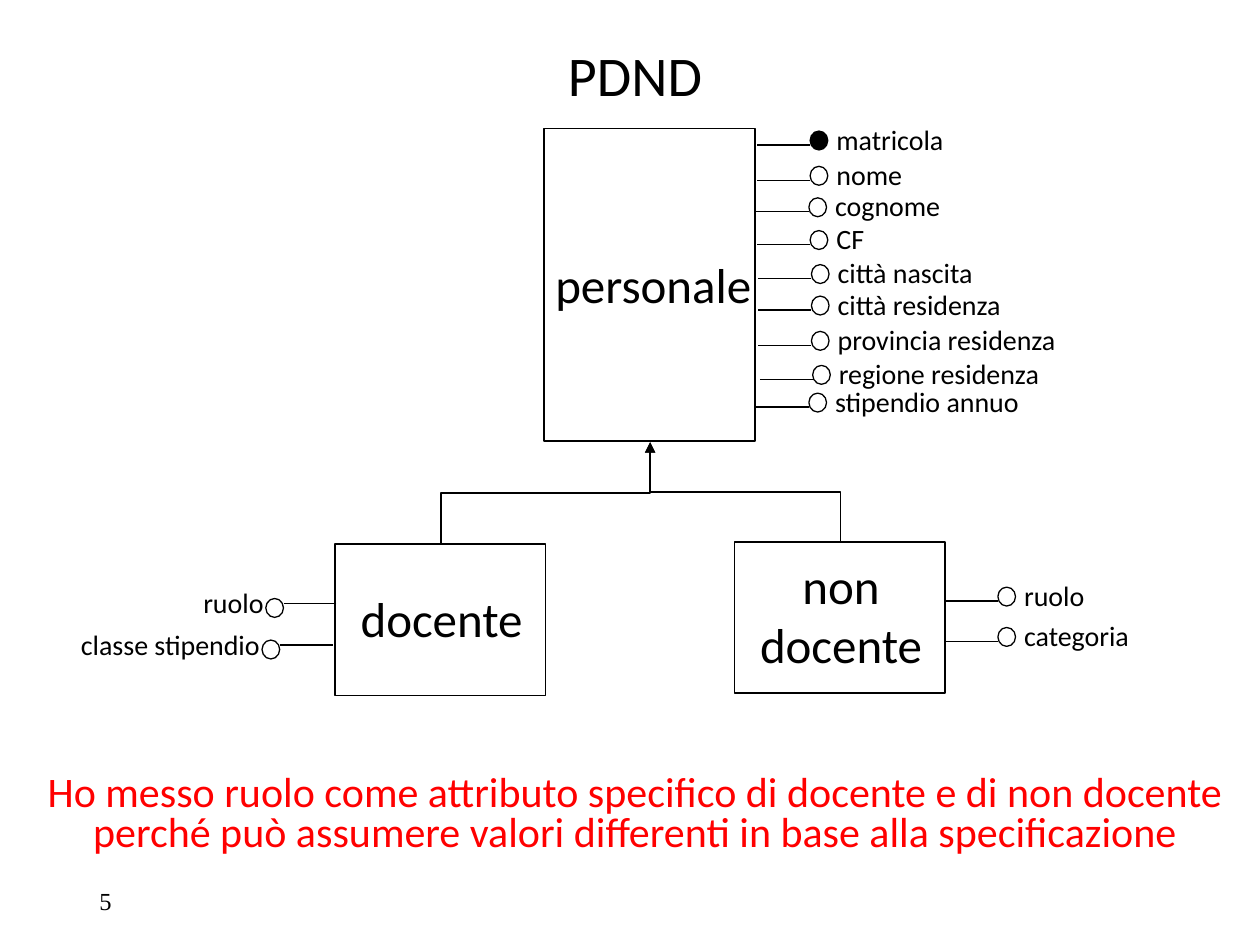
from lxml.etree import SubElement
from pptx import Presentation
from pptx.dml.color import RGBColor
from pptx.enum.shapes import MSO_CONNECTOR, MSO_SHAPE
from pptx.enum.text import MSO_ANCHOR, PP_ALIGN
from pptx.oxml.ns import qn
from pptx.util import Inches, Pt

BLACK, WHITE, RED = "000000", "FFFFFF", "FF0000"

deck = Presentation()
deck.slide_width, deck.slide_height = Inches(10), Inches(7.5)
slide = deck.slides.add_slide(deck.slide_layouts[5])
shapes = slide.shapes


def write(box, text, size, align=PP_ALIGN.LEFT, anchor=MSO_ANCHOR.TOP,
          color=BLACK, font="Calibri", spacing=None):
    frame = box.text_frame
    frame.word_wrap = True
    frame.vertical_anchor = anchor
    frame.text = text
    paragraph = frame.paragraphs[0]
    paragraph.alignment = align
    paragraph.line_spacing = spacing
    paragraph.font.size = Pt(size)
    paragraph.font.name = font
    paragraph.font.color.rgb = RGBColor.from_string(color)


def outline(shape, width):
    shape.line.color.rgb = RGBColor.from_string(BLACK)
    shape.line.width = Pt(width)
    SubElement(shape._element.spPr, qn("a:effectLst"))


title = shapes.title
title.left, title.top, title.width, title.height = map(Inches, (0.27, 0.22, 9.54, 0.8))
write(title, "PDND", 32, PP_ALIGN.CENTER, MSO_ANCHOR.MIDDLE, spacing=0.9)

page_number = shapes.add_textbox(Inches(0.69), Inches(6.95), Inches(2.25), Inches(0.4))
write(page_number, "5", 14, anchor=MSO_ANCHOR.MIDDLE, font="Times New Roman")

entities = [
    ("personale", (4.32, 1.02, 1.67, 2.48), (4.3, 1.97, 1.77, 0.57)),
    ("docente", (2.66, 4.32, 1.67, 1.2), (2.67, 4.62, 1.67, 0.57)),
    ("non docente", (5.83, 4.3, 1.67, 1.2), (5.84, 4.36, 1.67, 1.04)),
]
for name, frame_place, name_place in entities:
    entity = shapes.add_shape(MSO_SHAPE.RECTANGLE, *map(Inches, frame_place))
    entity.fill.solid()
    entity.fill.fore_color.rgb = RGBColor.from_string(WHITE)
    outline(entity, 1)
    write(shapes.add_textbox(*map(Inches, name_place)), name, 28, PP_ALIGN.CENTER)

attributes = [
    ("matricola", 6.01, 1.15, "right"),
    ("nome", 6.01, 1.43, "right"),
    ("cognome", 6, 1.68, "right"),
    ("CF", 6.01, 1.94, "right"),
    ("città nascita", 6.02, 2.21, "right"),
    ("città residenza", 6.02, 2.46, "right"),
    ("provincia residenza", 6.02, 2.74, "right"),
    ("regione residenza", 6.03, 3.01, "right"),
    ("stipendio annuo", 6, 3.23, "right"),
    ("ruolo", 2.67, 4.79, "left"),
    ("classe stipendio", 2.64, 5.12, "left"),
    ("ruolo", 7.5, 4.77, "right"),
    ("categoria", 7.5, 5.09, "right"),
]
for name, x, y, side in attributes:
    if side == "right":
        stem_end, dot_x, dot_y = x + 0.42, x + 0.42, y - 0.11
        label_x, label_y, align = x + 0.53, y - 0.23, PP_ALIGN.LEFT
    else:
        stem_end, dot_x, dot_y = x - 0.42, x - 0.56, y - 0.04
        label_x, label_y, align = x - 2.15, y - 0.19, PP_ALIGN.RIGHT
    label_width = 1.97 if name.endswith("e residenza") or name.endswith("a residenza") else 1.67

    stem = shapes.add_connector(MSO_CONNECTOR.STRAIGHT, Inches(x), Inches(y),
                                Inches(stem_end), Inches(y))
    outline(stem, 0.75)
    dot = shapes.add_shape(MSO_SHAPE.OVAL, Inches(dot_x), Inches(dot_y),
                           Inches(0.14), Inches(0.15))
    if name == "matricola":
        dot.fill.solid()
        dot.fill.fore_color.rgb = RGBColor.from_string(BLACK)
    else:
        dot.fill.background()
    outline(dot, 0.75)
    label = shapes.add_textbox(Inches(label_x), Inches(label_y),
                               Inches(label_width), Inches(0.37))
    write(label, name, 16, align)

parent_x, parent_y = 5.16, 3.51
for child_x, child_y in [(3.5, 4.32), (6.67, 4.3)]:
    span, rise = parent_x - child_x, child_y - parent_y
    middle_x, middle_y = (parent_x + child_x) / 2, (parent_y + child_y) / 2
    branch = shapes.add_connector(
        MSO_CONNECTOR.ELBOW,
        Inches(middle_x - rise / 2), Inches(middle_y - span / 2),
        Inches(middle_x + rise / 2), Inches(middle_y + span / 2))
    branch._element.spPr.find(qn("a:xfrm")).set("rot", str(270 * 60000))
    outline(branch, 1)
    SubElement(branch.line._get_or_add_ln(), qn("a:tailEnd"), type="triangle")

remark = shapes.add_textbox(Inches(0.27), Inches(6.07), Inches(9.54), Inches(0.8))
write(remark, "Ho messo ruolo come attributo specifico di docente e di non docente "
      "perché può assumere valori differenti in base alla specificazione",
      24, PP_ALIGN.CENTER, MSO_ANCHOR.MIDDLE, RED, spacing=0.8)

deck.save("out.pptx")
